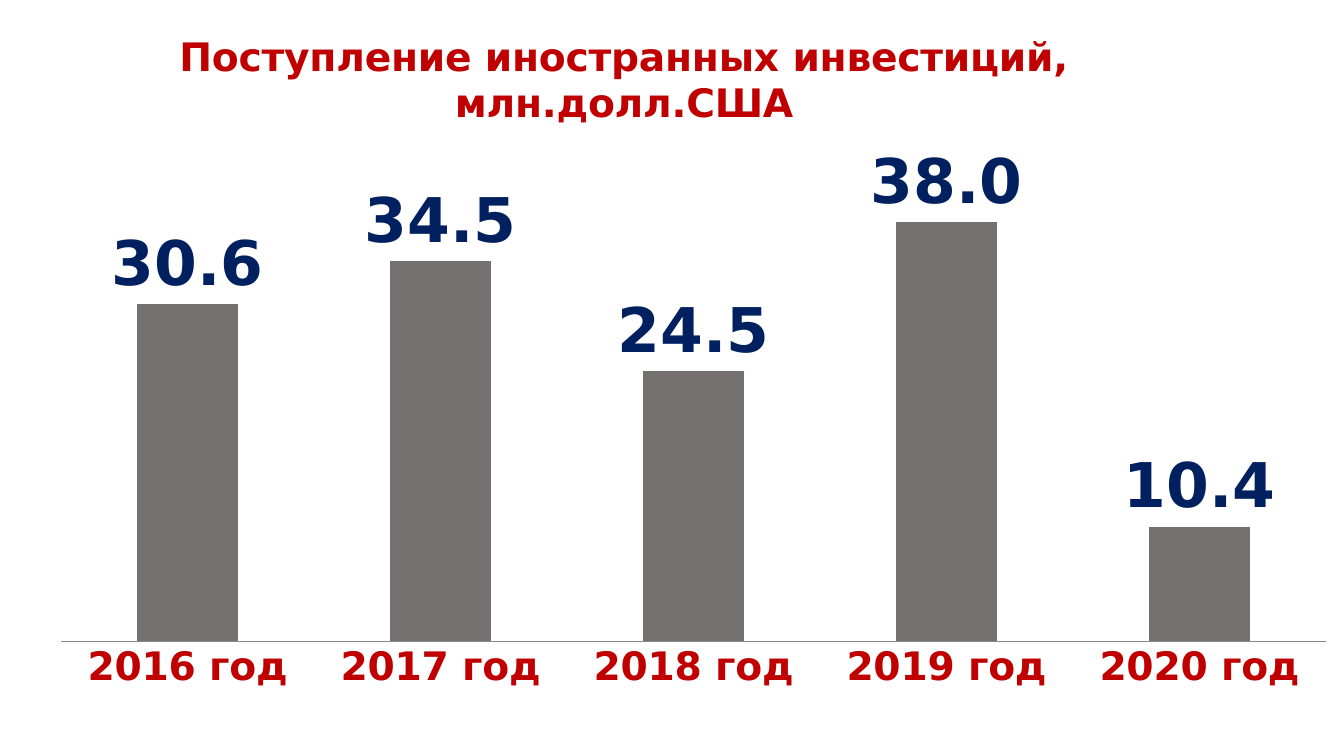
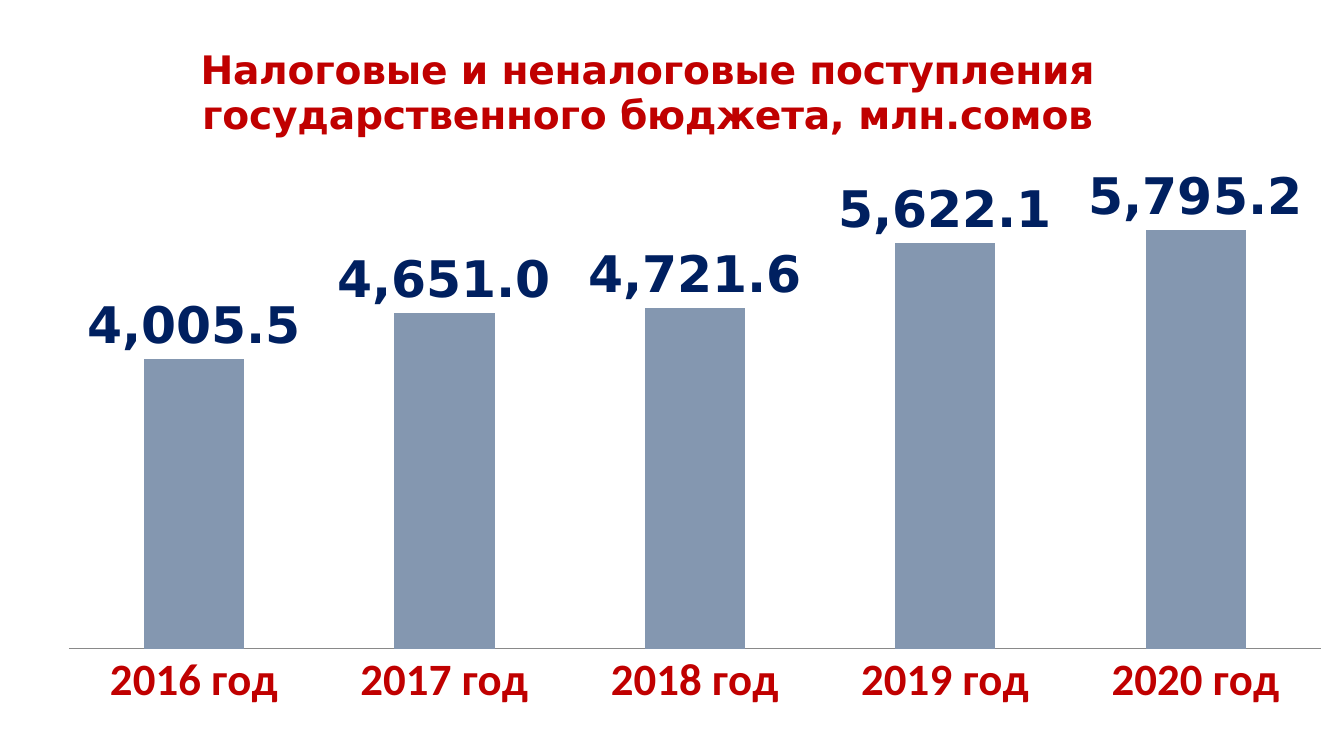
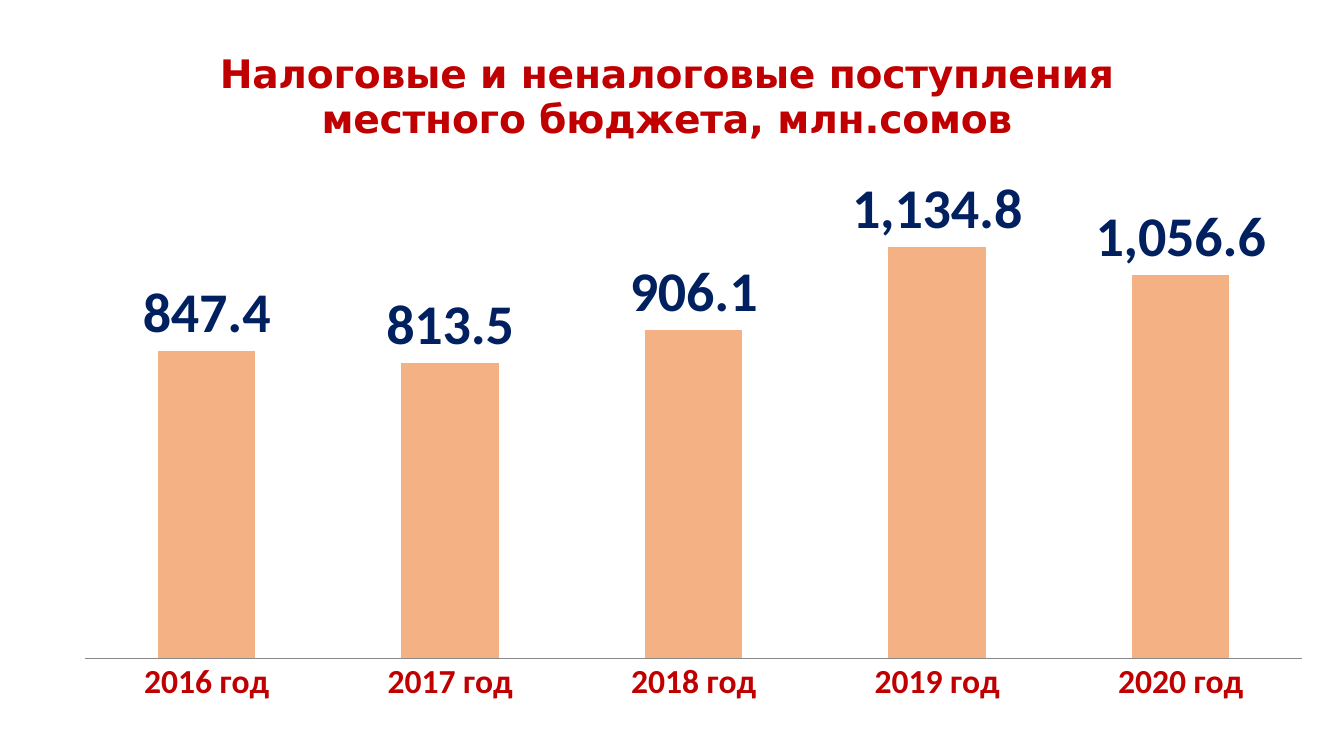
import pptx
import pptx.chart.data
import pptx.dml.color
import pptx.enum.chart
import pptx.oxml
import pptx.oxml.ns
import pptx.util

COLORS = {
    "heading": "C00000",
    "value": "002060",
    "text": "000000",
    "baseline": "898989",
    "investment": "767171",
    "state": "8497B0",
    "local": "F4B183",
}
WIDE_FONT = "DejaVu Sans"
BODY_FONT = "Calibri"
NUMBER_FORMAT = "#,##0.0"
YEARS = [f"{year} год" for year in range(2016, 2021)]

CHARTS = [
    {
        "title": "Поступление иностранных инвестиций, млн.долл.США",
        "title_at": (0.13, 0.02),
        "values": (30.6, 34.5, 24.5, 38, 10.4),
        "top_value": 40,
        "color": "investment",
        "box": (0, 0.25, 33.43, 18.29),
        "plot": (0.046, 0.262, 0.954, 0.608),
        "years": (28, WIDE_FONT),
        "labels": (44, WIDE_FONT),
    },
    {
        "title": "Налоговые и неналоговые поступления государственного бюджета, млн.сомов",
        "title_at": (0.14, 0.05),
        "values": (4005.5, 4651, 4721.6, 5622.1, 5795.2),
        "top_value": 7000,
        "color": "state",
        "box": (0.25, 0, 33.05, 18.67),
        "plot": (0.045, 0.193, 0.955, 0.683),
        "years": (32, BODY_FONT),
        "labels": (36, WIDE_FONT),
    },
    {
        "title": "Налоговые и неналоговые поступления местного бюджета, млн.сомов",
        "title_at": None,
        "values": (847.4, 813.5, 906.1, 1134.8, 1056.6),
        "top_value": 1200,
        "color": "local",
        "box": (0.69, 0.53, 32.23, 18.01),
        "plot": (0.045, 0.283, 0.952, 0.609),
        "years": (24, BODY_FONT),
        "labels": (40, BODY_FONT),
    },
]


def rgb(name):
    return pptx.dml.color.RGBColor.from_string(COLORS[name])


def set_all(target, values):
    for name, value in values.items():
        setattr(target, name, value)


def style_font(font, size, name, color, bold=True):
    set_all(font, {"size": pptx.util.Pt(size), "name": name, "bold": bold})
    font.color.rgb = rgb(color)


def place(part, index, fractions, inner=False):
    for old in part.findall(pptx.oxml.ns.qn("c:layout")):
        part.remove(old)
    settings = [("layoutTarget", "inner")] if inner else []
    settings += [("xMode", "edge"), ("yMode", "edge")]
    settings += zip("xywh", fractions)
    tags = "".join(f'<c:{tag} val="{value}"/>' for tag, value in settings)
    part.insert(index, pptx.oxml.parse_xml(
        f'<c:layout {pptx.oxml.ns.nsdecls("c")}>'
        f"<c:manualLayout>{tags}</c:manualLayout></c:layout>"))


def add_title(chart, text, position):
    chart.has_title = True
    heading = chart.chart_title.text_frame
    heading.text = text
    style_font(heading.paragraphs[0].runs[0].font, 28, WIDE_FONT, "heading")
    if position:
        place(chart.chart_title.element, 1, position)


def style_axes(chart, years, top_value):
    no_ticks = pptx.enum.chart.XL_TICK_MARK.NONE
    set_all(chart.category_axis, {
        "major_tick_mark": no_ticks,
        "minor_tick_mark": no_ticks,
        "has_major_gridlines": False,
    })
    style_font(chart.category_axis.tick_labels.font, *years, "heading")
    baseline = chart.category_axis.format.line
    baseline.width = pptx.util.Pt(0.75)
    baseline.color.rgb = rgb("baseline")
    set_all(chart.value_axis, {
        "visible": False,
        "has_major_gridlines": False,
        "minimum_scale": 0,
        "maximum_scale": top_value,
    })


def style_columns(plot, color, label_style):
    set_all(plot, {"gap_width": 150, "vary_by_categories": False,
                   "has_data_labels": True})
    columns = plot.series[0].format.fill
    columns.solid()
    columns.fore_color.rgb = rgb(color)
    set_all(plot.data_labels, {
        "show_value": True,
        "number_format": NUMBER_FORMAT,
        "number_format_is_linked": False,
        "position": pptx.enum.chart.XL_LABEL_POSITION.OUTSIDE_END,
    })
    style_font(plot.data_labels.font, *label_style, "value")


def add_column_chart(slide, content):
    figures = pptx.chart.data.CategoryChartData(number_format=NUMBER_FORMAT)
    figures.categories = YEARS
    figures.add_series("Series 1", content["values"])
    chart = slide.shapes.add_chart(
        pptx.enum.chart.XL_CHART_TYPE.COLUMN_CLUSTERED,
        *map(pptx.util.Cm, content["box"]), figures).chart
    chart.has_legend = False
    style_font(chart.font, 10, BODY_FONT, "text", bold=False)
    add_title(chart, content["title"], content["title_at"])
    style_axes(chart, content["years"], content["top_value"])
    style_columns(chart.plots[0], content["color"], content["labels"])
    plot_area = chart.element.find(".//" + pptx.oxml.ns.qn("c:plotArea"))
    place(plot_area, 0, content["plot"], inner=True)


def main():
    deck = pptx.Presentation()
    set_all(deck, {"slide_width": pptx.util.Cm(33.87),
                   "slide_height": pptx.util.Cm(19.05)})
    for content in CHARTS:
        add_column_chart(deck.slides.add_slide(deck.slide_layouts[6]), content)
    deck.save("out.pptx")


if __name__ == "__main__":
    main()
